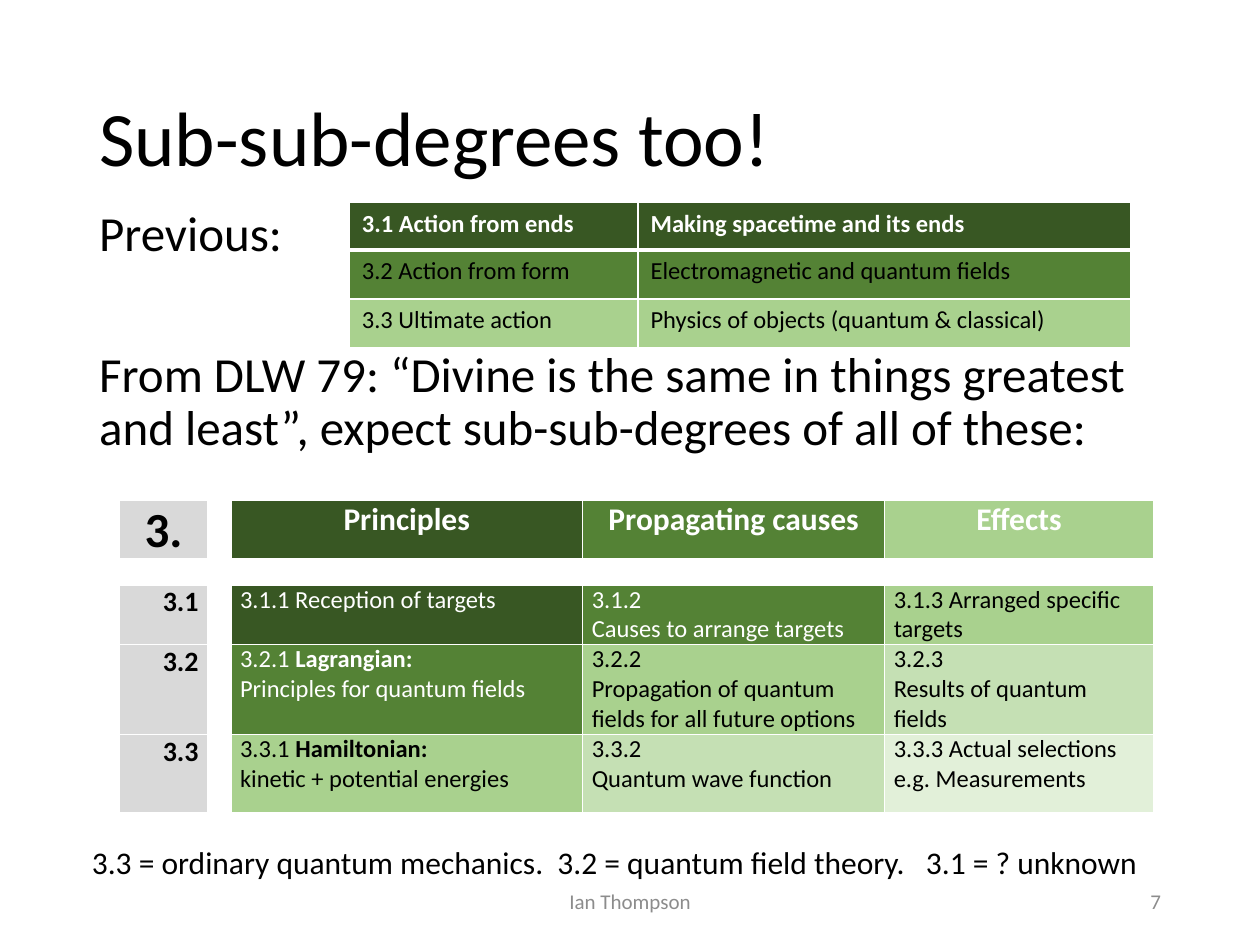
from dataclasses import dataclass
from typing import Optional

import pptx
import pptx.dml.color
import pptx.enum.text
import pptx.oxml
import pptx.oxml.ns
import pptx.util

Pt = pptx.util.Pt
RGBColor = pptx.dml.color.RGBColor
ALIGN = pptx.enum.text.PP_ALIGN
ANCHOR = pptx.enum.text.MSO_ANCHOR

FONT = "Calibri"
BLACK = RGBColor(0x00, 0x00, 0x00)
WHITE = RGBColor(0xFF, 0xFF, 0xFF)
FOOTER_GRAY = RGBColor(0x8C, 0x8C, 0x8C)
LABEL_GRAY = RGBColor(0xD9, 0xD9, 0xD9)
# Greens from darkest to palest
DARK = RGBColor(0x38, 0x57, 0x23)
STRONG = RGBColor(0x54, 0x82, 0x35)
MEDIUM = RGBColor(0xA9, 0xD1, 0x8E)
LIGHT = RGBColor(0xC5, 0xE0, 0xB4)
PALE = RGBColor(0xE2, 0xF0, 0xD9)
GREENS = [DARK, STRONG, MEDIUM, LIGHT, PALE]


@dataclass
class Box:
    left: float
    top: float
    width: float
    height: float

    def lengths(self) -> tuple:
        return Pt(self.left), Pt(self.top), Pt(self.width), Pt(self.height)


@dataclass
class Cell:
    """Text uses \\n for a paragraph, \\v for a line break, * to switch bold."""
    text: str
    fill: RGBColor
    color: RGBColor = BLACK
    size: float = 14
    bold: bool = False
    align: ALIGN = ALIGN.LEFT


@dataclass
class Label:
    text: str
    box: Box
    size: float
    color: RGBColor
    align: ALIGN = ALIGN.LEFT
    anchor: ANCHOR = ANCHOR.TOP
    wrap: bool = True


def set_font(paragraph, size: float, color: RGBColor, bold: bool = False) -> None:
    font = paragraph.font
    font.name, font.size, font.bold = FONT, Pt(size), bold
    font.color.rgb = color


def add_rich_text(paragraph, text: str) -> None:
    for line_index, line in enumerate(text.split("\v")):
        if line_index:
            paragraph.add_line_break()
        for part_index, part in enumerate(line.split("*")):
            if part:
                run = paragraph.add_run()
                run.text = part
                if part_index % 2:
                    run.font.bold = True


def set_borders(table_cell, bottom_width: float) -> None:
    properties = table_cell._tc.get_or_add_tcPr()
    widths = {"lnL": 1, "lnR": 1, "lnT": 1, "lnB": bottom_width}
    for index, (tag, width) in enumerate(widths.items()):
        properties.insert(index, pptx.oxml.parse_xml(
            f'<a:{tag} {pptx.oxml.ns.nsdecls("a")} w="{Pt(width)}">'
            f'<a:solidFill><a:srgbClr val="{WHITE}"/></a:solidFill></a:{tag}>'))


def fill_cell(table_cell, cell: Cell, margins: Optional[tuple], bottom_width: float) -> None:
    table_cell.fill.solid()
    table_cell.fill.fore_color.rgb = cell.fill
    if margins:
        side, end = margins
        table_cell.margin_left = table_cell.margin_right = Pt(side)
        table_cell.margin_top = table_cell.margin_bottom = Pt(end)
    frame = table_cell.text_frame
    for index, text in enumerate(cell.text.split("\n")):
        paragraph = frame.add_paragraph() if index else frame.paragraphs[0]
        set_font(paragraph, cell.size, cell.color, cell.bold)
        paragraph.alignment = cell.align
        add_rich_text(paragraph, text)
    set_borders(table_cell, bottom_width)


def add_table(slide, box: Box, widths: list[float], heights: list[float],
              rows: list[list[Cell]], margins: Optional[tuple] = None) -> None:
    table = slide.shapes.add_table(len(heights), len(widths), *box.lengths()).table
    for column, width in zip(table.columns, widths):
        column.width = Pt(width)
    for row, height in zip(table.rows, heights):
        row.height = Pt(height)
    for row_index, row in enumerate(rows):
        for column_index, cell in enumerate(row):
            fill_cell(table.cell(row_index, column_index), cell, margins,
                      1 if row_index else 3)


def add_label(slide, label: Label) -> None:
    frame = slide.shapes.add_textbox(*label.box.lengths()).text_frame
    frame.word_wrap = label.wrap
    frame.vertical_anchor = label.anchor
    paragraph = frame.paragraphs[0]
    paragraph.text = label.text
    paragraph.alignment = label.align
    set_font(paragraph, label.size, label.color)


def fill_placeholder(placeholder, box: Box, texts: list[str], size: float,
                     spaces: list[float]) -> None:
    placeholder.left, placeholder.top, placeholder.width, placeholder.height = box.lengths()
    frame = placeholder.text_frame
    frame.auto_size = pptx.enum.text.MSO_AUTO_SIZE.NONE
    for index, (text, space) in enumerate(zip(texts, spaces)):
        paragraph = frame.add_paragraph() if index else frame.paragraphs[0]
        paragraph.text = text
        paragraph.alignment = ALIGN.LEFT
        paragraph.line_spacing = 0.9
        paragraph.space_before = Pt(space)
        set_font(paragraph, size, BLACK)
        # No bullet and no hanging indent
        properties = paragraph._p.get_or_add_pPr()
        properties.set("marL", "0")
        properties.set("indent", "0")
        properties.insert_element_before(
            pptx.oxml.parse_xml(f'<a:buNone {pptx.oxml.ns.nsdecls("a")}/>'),
            "a:tabLst", "a:defRPr", "a:extLst")


def spacer() -> Cell:
    return Cell("", WHITE, size=8)


def degree_row(name: str, first_shade: int, texts: list[str], colors: list[RGBColor]) -> list[Cell]:
    """Each cell is one shade paler than the one before it."""
    shades = GREENS[first_shade:first_shade + 3]
    return [Cell(name, LABEL_GRAY, size=16, bold=True, align=ALIGN.RIGHT), spacer(),
            *(Cell(*values) for values in zip(texts, shades, colors))]


PREVIOUS_ROWS = [
    [Cell(text, fill, color, bold=bold) for text in texts]
    for texts, fill, color, bold in [
        (("3.1 Action from ends", "Making spacetime and its ends"), DARK, WHITE, True),
        (("3.2 Action from form", "Electromagnetic and quantum fields"), STRONG, BLACK, False),
        (("3.3 Ultimate action", "Physics of objects (quantum & classical)"), MEDIUM, BLACK, False),
    ]
]

HEADINGS = ["Principles", "Propagating causes", "Effects"]
DEGREE_ROWS = [
    [Cell("3.", LABEL_GRAY, size=28, bold=True, align=ALIGN.CENTER), spacer(),
     *(Cell(text, fill, WHITE, 18, True, ALIGN.CENTER) for text, fill in zip(HEADINGS, GREENS))],
    [spacer() for _ in range(5)],
    degree_row("3.1", 0, ["3.1.1 Reception of targets", "3.1.2 \vCauses to arrange targets",
                          "3.1.3 Arranged specific targets"], [WHITE, WHITE, BLACK]),
    degree_row("3.2", 1, ["3.2.1 *Lagrangian: *\vPrinciples for quantum fields",
                          "3.2.2 \vPropagation of quantum fields for all future options",
                          "3.2.3 \vResults of quantum fields"], [WHITE, BLACK, BLACK]),
    degree_row("3.3", 2, ["3.3.1 *Hamiltonian:*\vkinetic + potential energies",
                          "3.3.2\nQuantum wave function",
                          "3.3.3 Actual selections\ne.g. Measurements"], [BLACK] * 3),
]

LABELS = [
    Label("3.3 = ordinary quantum mechanics.  3.2 = quantum field theory.   3.1 = ? unknown",
          Box(45.4, 478, 657.4, 29), 18, BLACK, wrap=False),
    Label("7", Box(508.5, 500.5, 162, 28.8), 12, FOOTER_GRAY, ALIGN.RIGHT, ANCHOR.MIDDLE),
    Label("Ian Thompson", Box(238.5, 500.5, 243, 28.8), 12, FOOTER_GRAY,
          ALIGN.CENTER, ANCHOR.MIDDLE),
]


def main() -> None:
    presentation = pptx.Presentation()
    presentation.slide_width, presentation.slide_height = Pt(720), Pt(540)
    slide = presentation.slides.add_slide(presentation.slide_layouts[1])

    # Title and body
    fill_placeholder(slide.shapes.title, Box(49.5, 28.75, 621, 104.4),
                     ["Sub-sub-degrees too!"], 44, [0])
    fill_placeholder(slide.placeholders[1], Box(49.5, 116, 621, 413),
                     ["Previous:", "From DLW 79: “Divine is the same in things greatest and least”, "
                      "expect sub-sub-degrees of all of these:"], 28, [10, 50])

    # Tables
    add_table(slide, Box(199.6, 115.8, 446.4, 83), [165, 281.4], [27, 28, 28], PREVIOUS_ROWS)
    add_table(slide, Box(68.2, 286, 591, 178), [50.4, 13.4, 201, 172.6, 153.6],
              [34, 14, 34, 51.4, 44.6], DEGREE_ROWS, margins=(5.2, 0))

    # Closing line and footer
    for label in LABELS:
        add_label(slide, label)

    presentation.save("out.pptx")


if __name__ == "__main__":
    main()
